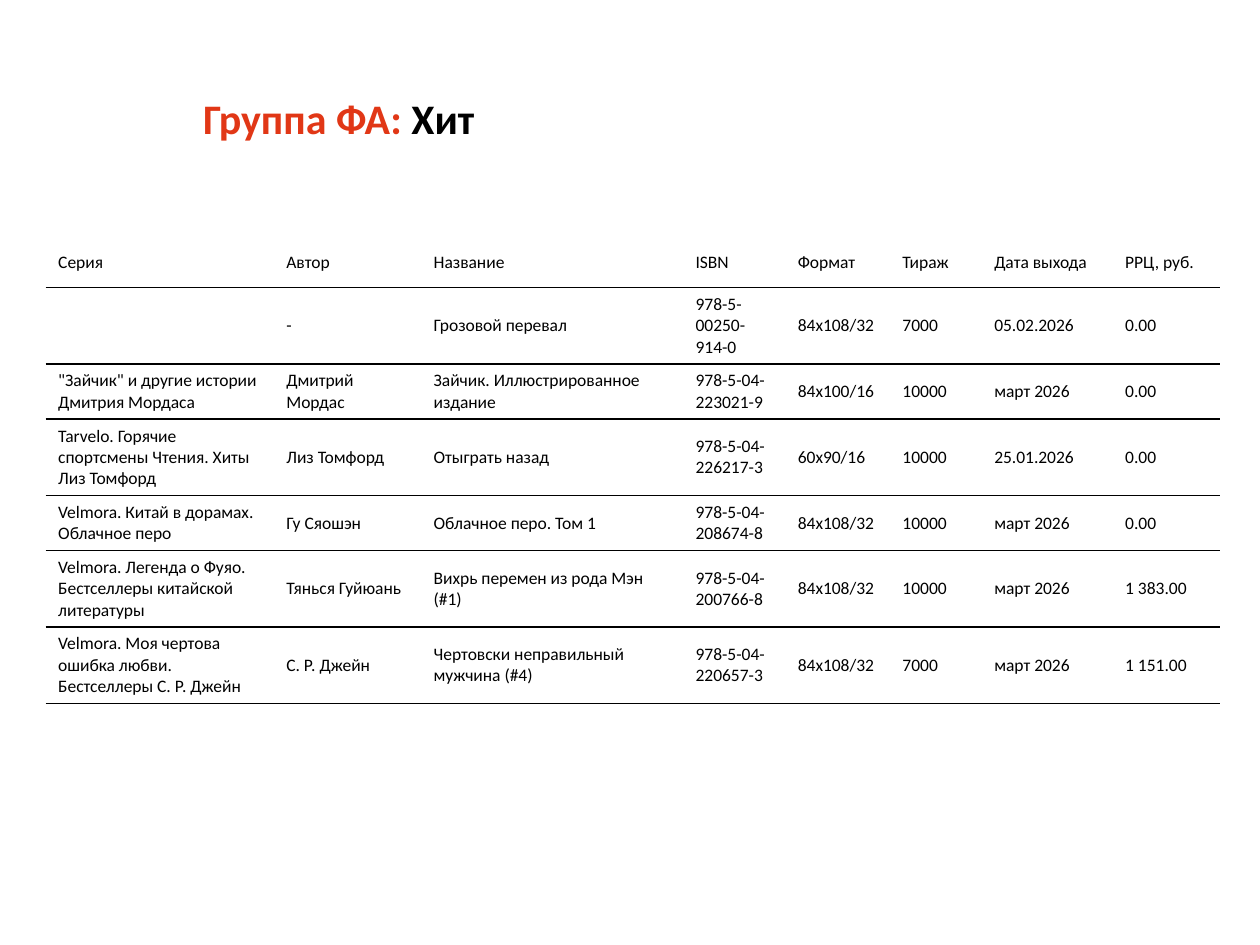
import dataclasses

import lxml.etree
import pptx
import pptx.dml.color
import pptx.enum.text
import pptx.oxml
import pptx.oxml.ns
import pptx.util
from pptx.util import Cm

NO_STYLE_NO_GRID = "{2D5ABB26-0587-4C30-8999-92F81FD0307C}"

COLUMN_WIDTHS = [4.6, 2.97, 5.28, 2.06, 2.11, 1.85, 2.64, 2.16]
BOOKS = [
    ["Серия", "Автор", "Название", "ISBN", "Формат", "Тираж", "Дата выхода", "РРЦ, руб."],
    ["", "-", "Грозовой перевал", "978-5-00250-914-0", "84x108/32", "7000", "05.02.2026", "0.00"],
    ['"Зайчик" и другие истории Дмитрия Мордаса', "Дмитрий Мордас",
     "Зайчик. Иллюстрированное издание", "978-5-04-223021-9", "84x100/16", "10000", "март 2026", "0.00"],
    ["Tarvelo. Горячие спортсмены Чтения. Хиты Лиз Томфорд", "Лиз Томфорд",
     "Отыграть назад", "978-5-04-226217-3", "60x90/16", "10000", "25.01.2026", "0.00"],
    ["Velmora. Китай в дорамах. Облачное перо", "Гу Сяошэн",
     "Облачное перо. Том 1", "978-5-04-208674-8", "84x108/32", "10000", "март 2026", "0.00"],
    ["Velmora. Легенда о Фуяо. Бестселлеры китайской литературы", "Тянься Гуйюань",
     "Вихрь перемен из рода Мэн (#1)", "978-5-04-200766-8", "84x108/32", "10000", "март 2026", "1 383.00"],
    ["Velmora. Моя чертова ошибка любви. Бестселлеры С. Р. Джейн", "С. Р. Джейн",
     "Чертовски неправильный мужчина (#4)", "978-5-04-220657-3", "84x108/32", "7000", "март 2026", "1 151.00"],
]


@dataclasses.dataclass
class Theme:
    font: str = "Calibri"
    text: str = "000000"
    accent: str = "E13716"
    title_size: int = 24
    table_size: int = 10
    rule_width: int = 1


class SlideBuilder:
    def __init__(self, slide, theme):
        self.slide = slide
        self.theme = theme

    def format_font(self, font, size, color, bold=False):
        font.name = self.theme.font
        font.size = pptx.util.Pt(size)
        font.bold = bold
        font.color.rgb = pptx.dml.color.RGBColor.from_string(color)

    def add_title(self, label, name, left, top, width, height):
        """Fill the title placeholder with an accented label and a plain name."""
        title = self.slide.shapes.title
        title.left, title.top, title.width, title.height = map(Cm, (left, top, width, height))
        frame = title.text_frame
        frame.word_wrap = True
        frame.auto_size = pptx.enum.text.MSO_AUTO_SIZE.NONE
        frame.vertical_anchor = pptx.enum.text.MSO_ANCHOR.TOP
        paragraph = frame.paragraphs[0]
        paragraph.alignment = pptx.enum.text.PP_ALIGN.LEFT
        for text, color in ((label, self.theme.accent), (name, self.theme.text)):
            run = paragraph.add_run()
            run.text = text
            self.format_font(run.font, self.theme.title_size, color, bold=True)

    def add_table(self, rows, column_widths, left, top, row_height):
        shape = self.slide.shapes.add_table(
            len(rows), len(column_widths), Cm(left), Cm(top),
            Cm(sum(column_widths)), Cm(row_height * len(rows)))
        table = shape.table
        table.first_row = False
        table.horz_banding = False
        style = shape._element.find(".//" + pptx.oxml.ns.qn("a:tableStyleId"))
        style.text = NO_STYLE_NO_GRID
        for column, width in zip(table.columns, column_widths):
            column.width = Cm(width)
        for row, values in zip(table.rows, rows):
            row.height = Cm(row_height)
            for cell, value in zip(row.cells, values):
                self.fill_cell(cell, value)

    def fill_cell(self, cell, value):
        cell.vertical_anchor = pptx.enum.text.MSO_ANCHOR.MIDDLE
        paragraph = cell.text_frame.paragraphs[0]
        paragraph.text = value
        for run in paragraph.runs:
            self.format_font(run.font, self.theme.table_size, self.theme.text)
        self.add_bottom_rule(cell)
        cell.fill.background()

    def add_bottom_rule(self, cell):
        qn = pptx.oxml.ns.qn
        properties = cell._tc.get_or_add_tcPr()
        line = lxml.etree.SubElement(
            properties, qn("a:lnB"), w=str(pptx.util.Pt(self.theme.rule_width)))
        fill = lxml.etree.SubElement(line, qn("a:solidFill"))
        lxml.etree.SubElement(fill, qn("a:srgbClr"), val=self.theme.text)


def main():
    presentation = pptx.Presentation()
    presentation.slide_width = Cm(25.4)
    presentation.slide_height = Cm(19.05)
    slide = presentation.slides.add_slide(presentation.slide_layouts[5])
    builder = SlideBuilder(slide, Theme())
    builder.add_title("Группа ФА: ", "Хит", left=3.84, top=1.73, width=21.44, height=2.11)
    builder.add_table(BOOKS, COLUMN_WIDTHS, left=0.92, top=4.78, row_height=1.02)
    presentation.save("out.pptx")


if __name__ == "__main__":
    main()
